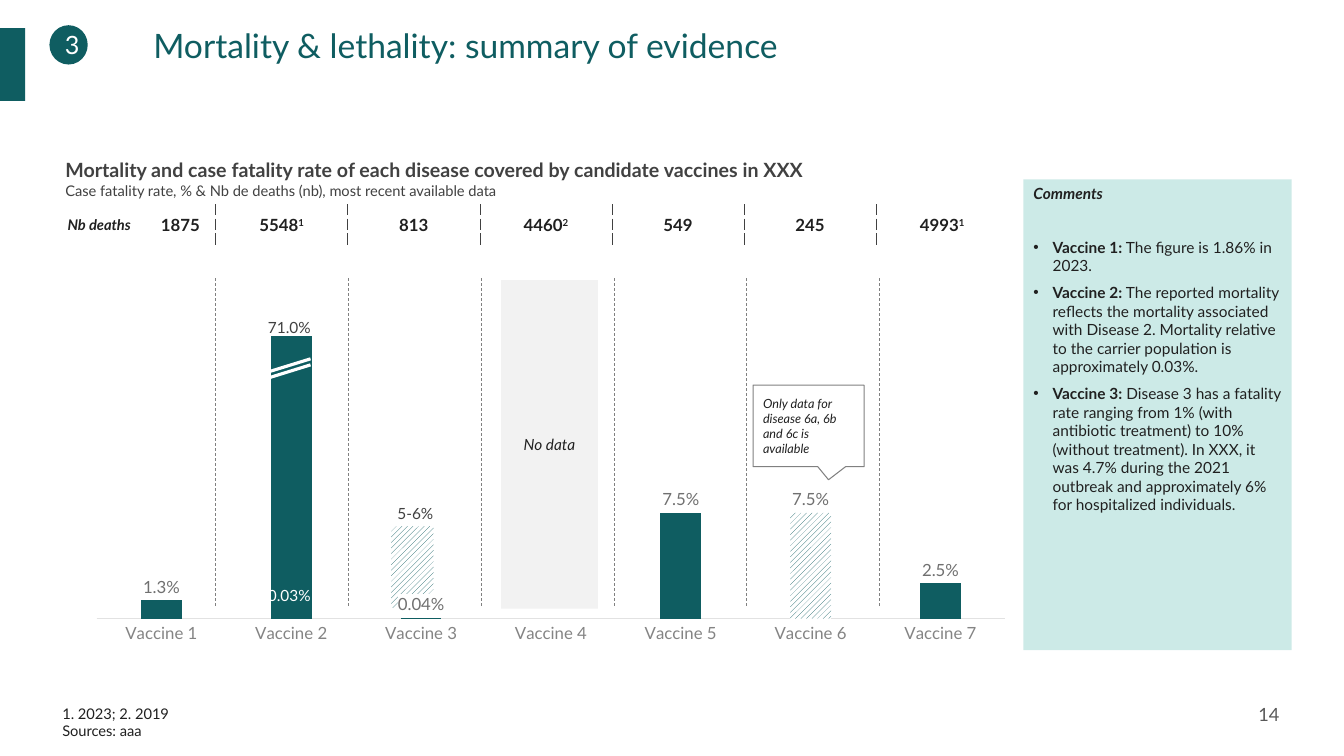
"""Build the mortality and lethality evidence slide."""
import copy
import lxml.etree
import pptx
import pptx.chart.data
import pptx.dml.color
import pptx.enum.chart
import pptx.enum.dml
import pptx.enum.shapes
import pptx.enum.text
import pptx.oxml
import pptx.oxml.ns
import pptx.util

PX = 9144
TEAL, DARK, INK, GRAY = "0F5D61", "414141", "202020", "808080"
KIND = pptx.enum.shapes.MSO_SHAPE
LEFT = pptx.enum.text.PP_ALIGN.LEFT
MID = pptx.enum.text.PP_ALIGN.CENTER
TOP = pptx.enum.text.MSO_ANCHOR.TOP
HALF = pptx.enum.text.MSO_ANCHOR.MIDDLE
DASH = pptx.enum.dml.MSO_LINE.DASH
HATCH = pptx.enum.dml.MSO_PATTERN.WIDE_UPWARD_DIAGONAL
NS = ('xmlns:a="http://schemas.openxmlformats.org/drawingml/2006/main" '
      'xmlns:c="http://schemas.openxmlformats.org/drawingml/2006/chart"')
BOLD = {"bold": True}
RAISED = {"raised": True}
DEATHS = [("1875",), ("5548", "1"), ("813",), ("4460", "2"), ("549",), ("245",), ("4993", "1")]
RATES = [0.013, 0.2, 0.0004, None, 0.075, 0.075, 0.025]
NOTES = [
    ("Vaccine 1:", " The figure is 1.86% in 2023."),
    ("Vaccine 2:", " The reported mortality reflects the mortality associated with Disease 2. "
     "Mortality relative to the carrier population is approximately 0.03%."),
    ("Vaccine 3:", " Disease 3 has a fatality rate ranging from 1% (with antibiotic treatment) "
     "to 10% (without treatment). In XXX, it was 4.7% during the 2021 outbreak and "
     "approximately 6% for hospitalized individuals."),
]


def put(item, vals):
    """Set each attribute named in a dict."""
    for name, val in vals.items():
        setattr(item, name, val)


def px(*nums):
    """Turn px lengths into EMU."""
    return [pptx.util.Emu(num * PX) for num in nums]


def rgb(code):
    """Turn a hex string into a colour."""
    return pptx.dml.color.RGBColor.from_string(code)


def node(xml):
    """Parse an XML snippet that uses the a and c prefixes."""
    return pptx.oxml.parse_xml(xml.replace(" NS", " " + NS, 1))


def style(font, size, color, **more):
    """Format a font."""
    put(font, {"name": "Lato", "size": pptx.util.Pt(size), **more})
    font.color.rgb = rgb(color)


def write(frame, paras, size, color, align=LEFT, anchor=TOP, inset=(10, 5, 10, 5), **base):
    """Fill a text frame with paragraphs made of (text, format) runs."""
    sides = ("margin_left", "margin_top", "margin_right", "margin_bottom")
    put(frame, {"word_wrap": True, "vertical_anchor": anchor, **dict(zip(sides, px(*inset)))})
    for num, runs in enumerate(paras):
        para = frame.paragraphs[0] if num == 0 else frame.add_paragraph()
        para.alignment = align
        for text, form in runs:
            run = para.add_run()
            run.text = text
            form = {"size": size, "color": color, **base, **form}
            if form.pop("raised", False):
                run._r.get_or_add_rPr().set("baseline", "30000")
            style(run.font, **form)


def label(slide, box, lines, size, color, **form):
    """Add a text box of plain lines."""
    frame = slide.shapes.add_textbox(*px(*box)).text_frame
    write(frame, [[(text, {})] for text in lines], size, color, **form)


def shape(slide, kind, box, fill=None, edge=None):
    """Add a flat preset shape."""
    item = slide.shapes.add_shape(kind, *px(*box))
    item.shadow.inherit = False
    paint(item.fill, fill)
    if edge:
        item.line.color.rgb = rgb(edge)
        item.line.width = pptx.util.Pt(0.75)
    else:
        item.line.fill.background()
    return item


def paint(fill, code):
    """Make a fill solid, or clear it."""
    if code:
        fill.solid()
        fill.fore_color.rgb = rgb(code)
    else:
        fill.background()


def hatch(fill):
    """Give a fill teal diagonal lines on white."""
    fill.patterned()
    fill.pattern = HATCH
    put(fill.fore_color, {"rgb": rgb(TEAL)})
    put(fill.back_color, {"rgb": rgb("FFFFFF")})


def line(shapes, ends, color, width, dash=None):
    """Add a straight line."""
    item = shapes.add_connector(pptx.enum.shapes.MSO_CONNECTOR.STRAIGHT, *px(*ends))
    item.line.color.rgb = rgb(color)
    put(item.line, {"width": pptx.util.Pt(width), "dash_style": dash})
    item._element.spPr.append(node("<a:effectLst NS/>"))


def head(slide):
    """Set the slide title."""
    title = slide.shapes.title
    put(title, dict(zip(("left", "top", "width", "height"), px(52, 25, 1255, 80))))
    frame = title.text_frame
    frame.auto_size = pptx.enum.text.MSO_AUTO_SIZE.NONE
    write(frame, [[("Mortality & lethality: summary of evidence", {})]], 24, TEAL, inset=(0,) * 4)
    put_indent(frame.paragraphs[0], 100, 0)


def put_indent(para, left, first):
    """Set the left margin and first line indent of a paragraph."""
    props = para._p.get_or_add_pPr()
    props.set("marL", str(left * PX))
    props.set("indent", str(first * PX))
    return props


def notes(slide):
    """Fill the comments panel."""
    body = slide.placeholders[1]
    put(body, dict(zip(("left", "top", "width", "height"), px(1015, 178, 266, 467))))
    paint(body.fill, "009688")
    tint = body._element.spPr.find(".//" + pptx.oxml.ns.qn("a:srgbClr"))
    tint.append(node('<a:alpha NS val="20000"/>'))
    frame = body.text_frame
    frame.auto_size = pptx.enum.text.MSO_AUTO_SIZE.NONE
    paras = [[("Comments", {"bold": True, "italic": True})]]
    paras += [[(name, BOLD), (text, {})] for name, text in NOTES]
    write(frame, paras, 11, INK)
    for num, para in enumerate(frame.paragraphs):
        para.space_before = pptx.util.Pt(25 if num == 1 else 6)
        props = put_indent(para, 19 if num else 0, -19 if num else 0)
        props.append(node('<a:buChar NS char="•"/>' if num else "<a:buNone NS/>"))


def chart(slide):
    """Add the case fatality chart."""
    data = pptx.chart.data.CategoryChartData()
    data.categories = [f"Vaccine {num}" for num in range(1, 8)]
    data.add_series("Series 1", RATES)
    kind = pptx.enum.chart.XL_CHART_TYPE.COLUMN_CLUSTERED
    graph = slide.shapes.add_chart(kind, *px(77, 256, 939, 389), data).chart
    put(graph, {"has_legend": False, "has_title": False})
    style(graph.font, 12, DARK)
    none = pptx.enum.chart.XL_TICK_MARK.NONE
    put(graph.value_axis, {"visible": False, "has_major_gridlines": False,
                           "minimum_scale": 0, "maximum_scale": 0.25})
    axis = graph.category_axis
    put(axis, {"major_tick_mark": none, "minor_tick_mark": none})
    style(axis.tick_labels.font, 12, "848484")
    axis.format.line.color.rgb = rgb("E2E2E2")
    axis.format.line.width = pptx.util.Pt(0.75)
    plot = graph.plots[0]
    put(plot, {"gap_width": 219, "overlap": -27, "vary_by_categories": False})
    bars = plot.series[0]
    paint(bars.format.fill, TEAL)
    hatch(bars.points[5].format.fill)
    tags = bars.data_labels
    put(tags, {"show_value": True, "number_format": "0.0%", "number_format_is_linked": False,
               "position": pptx.enum.chart.XL_LABEL_POSITION.OUTSIDE_END})
    style(tags.font, 12, "707070")
    shows = "".join(f'<c:show{name} val="{int(name == "Val")}"/>' for name in
                    ("LegendKey", "Val", "CatName", "SerName", "Percent", "BubbleSize"))
    small = node('<c:dLbl NS><c:idx val="2"/><c:numFmt formatCode="0.00%" sourceLinked="0"/>'
                 '<c:spPr><a:solidFill><a:srgbClr val="FFFFFF"/></a:solidFill></c:spPr>'
                 f'<c:dLblPos val="outEnd"/>{shows}</c:dLbl>')
    small.insert(3, copy.deepcopy(tags._element.find(pptx.oxml.ns.qn("c:txPr"))))
    tags._element.insert(0, node('<c:dLbl NS><c:idx val="1"/><c:delete val="1"/></c:dLbl>'))
    tags._element.insert(1, small)
    area = graph._chartSpace.chart.plotArea
    for old in area.findall(pptx.oxml.ns.qn("c:layout")):
        area.remove(old)
    spots = "".join(f'<c:{name} val="{val}"/>' for name, val in
                    (("x", 0.02), ("y", 0.02), ("w", 0.96), ("h", 0.9)))
    area.insert(0, node('<c:layout NS><c:manualLayout><c:layoutTarget val="inner"/>'
                        '<c:xMode val="edge"/><c:yMode val="edge"/>'
                        f'{spots}</c:manualLayout></c:layout>'))


def table(slide):
    """Add the row with the number of deaths."""
    grid = slide.shapes.add_table(1, 8, *px(57, 203, 943, 41)).table
    put(grid, {"first_row": False, "horz_banding": False})
    for num, cell in enumerate(grid.iter_cells()):
        grid.columns[num].width = px((87, 70)[num] if num < 2 else 131)[0]
        if num:
            runs = [(text, RAISED if pos else {}) for pos, text in enumerate(DEATHS[num - 1])]
            write(cell.text_frame, [runs], 12, INK, MID, bold=True)
        else:
            write(cell.text_frame, [[("Nb deaths", {})]], 10.5, INK, bold=True, italic=True)
        cell.vertical_anchor = HALF
        props = cell._tc.get_or_add_tcPr()
        for side, dark, wide in (("L", num > 1, 1), ("R", 0 < num < 7, 1),
                                 ("T", False, 1), ("B", False, 3)):
            width, color, dash = (0.5, DARK, "sysDash") if dark else (wide, "FFFFFF", "solid")
            props.append(node(f'<a:ln{side} NS w="{int(width * 12700)}"><a:solidFill>'
                              f'<a:srgbClr val="{color}"/></a:solidFill>'
                              f'<a:prstDash val="{dash}"/></a:ln{side}>'))
        paint(cell.fill, "FFFFFF")


def main():
    """Build and save the slide."""
    deck = pptx.Presentation()
    put(deck, dict(zip(("slide_width", "slide_height"), px(1333, 750))))
    slide = deck.slides.add_slide(deck.slide_layouts[1])
    head(slide)
    notes(slide)
    hatch(shape(slide, KIND.RECTANGLE, (388, 522, 42, 81)).fill)
    shape(slide, KIND.RECTANGLE, (-1, 28, 26, 72), TEAL)
    label(slide, (1235, 680, 80, 57), ["14"], 13, "595959", anchor=HALF, inset=(13,) * 4)
    chart(slide)
    frame = slide.shapes.add_textbox(*px(55, 152, 776, 51)).text_frame
    write(frame, [[("Mortality and case fatality rate of each disease covered by "
                    "candidate vaccines in XXX", {"size": 14, "bold": True})],
                  [("Case fatality rate, % & Nb de deaths (nb), most recent available data", {})]],
          10.5, DARK)
    label(slide, (52, 697, 1113, 39), ["1. 2023; 2. 2019", "Sources: aaa"], 10.5, INK, anchor=HALF)
    blank = shape(slide, KIND.RECTANGLE, (497, 278, 96, 326), "F2F2F2")
    write(blank.text_frame, [[("No data", {})]], 11, INK, MID, HALF, italic=True)
    hint = shape(slide, KIND.RECTANGULAR_CALLOUT, (747, 382, 110, 81), None, GRAY)
    hint.adjustments[0], hint.adjustments[1] = 0.18, 0.66
    write(hint.text_frame, [[("Only data for disease 6a, 6b and 6c is available", {})]],
          9, INK, LEFT, HALF, italic=True)
    table(slide)
    cut = slide.shapes.add_group_shape()
    for top in (369, 375):
        line(cut.shapes, (266, top, 308, top - 13), "FFFFFF", 2.25)
    badge = shape(slide, KIND.OVAL, (49, 25, 38, 39), TEAL)
    write(badge.text_frame, [[("3", {})]], 18, "FFFFFF", MID, HALF)
    for num in range(6):
        left = round(214 + 131.6 * num)
        line(slide.shapes, (left, 276, left, 603), GRAY, 0.5, DASH)
    for left, top, text, color in ((241, 311, "71.0%", DARK), (366, 495, "5-6%", DARK),
                                   (241, 577, "0.03%", "FFFFFF")):
        label(slide, (left, top, 92, 30), [text], 11, color, align=MID, inset=(0, 5, 0, 5))
    deck.save("out.pptx")


if __name__ == "__main__":
    main()
